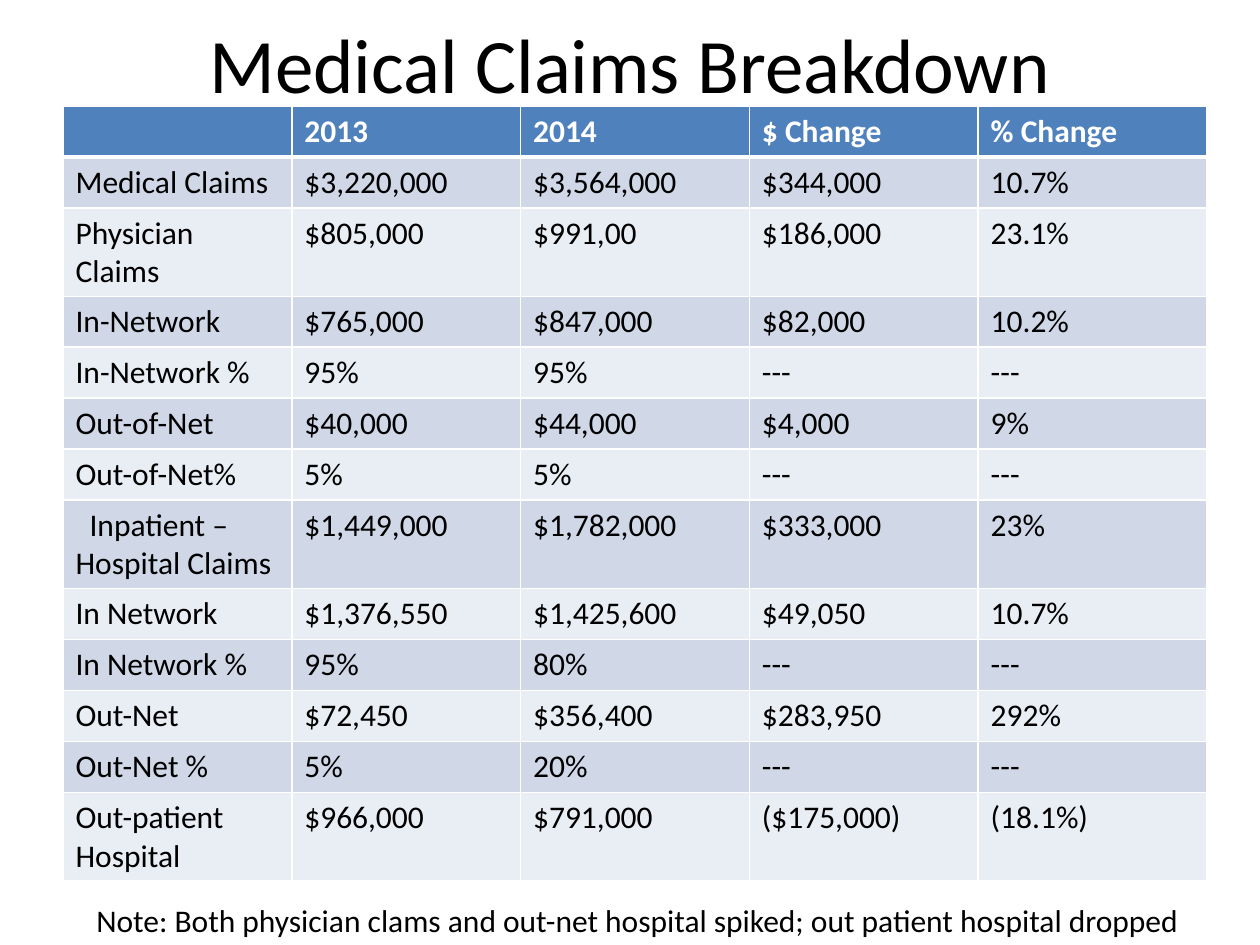
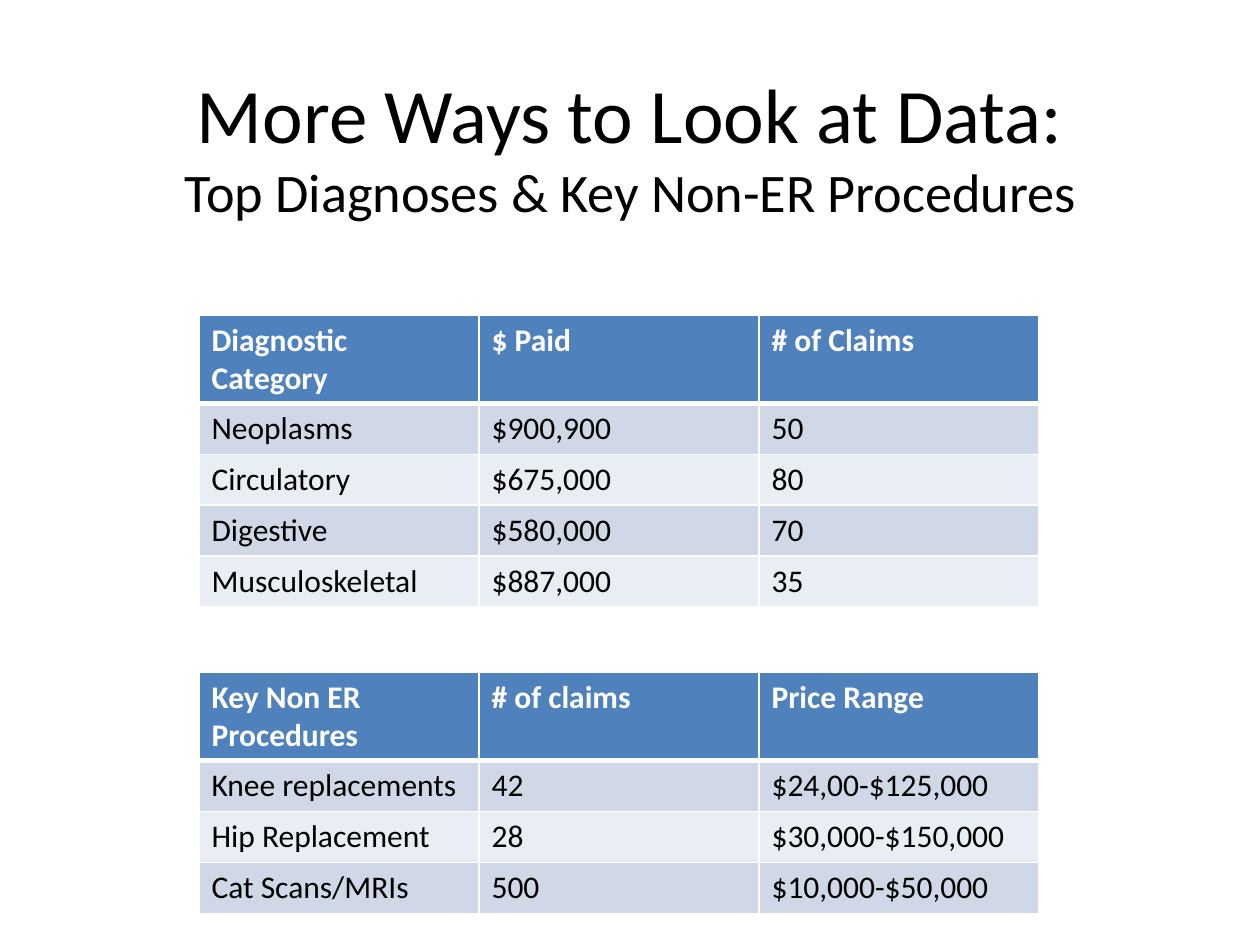
from lxml import etree
from pptx import Presentation
from pptx import util as u
from pptx.dml.color import RGBColor
from pptx.enum import text
from pptx.oxml import ns

PX = u.Inches(1) / 126
FONT = "Calibri"
BLACK = RGBColor(0x00, 0x00, 0x00)
WHITE = RGBColor(0xFF, 0xFF, 0xFF)
HEADER_BLUE = RGBColor(0x4F, 0x81, 0xBD)
BANDS = [RGBColor(0xE9, 0xED, 0xF4), RGBColor(0xD0, 0xD8, 0xE8)]
ROW_HEIGHT = 51

CLAIMS = [
    ["", "2013", "2014", "$ Change", "% Change"],
    ["Medical Claims", "$3,220,000", "$3,564,000", "$344,000", "10.7%"],
    ["Physician Claims", "$805,000", "$991,00", "$186,000", "23.1%"],
    ["In-Network", "$765,000", "$847,000", "$82,000", "10.2%"],
    ["In-Network %", "95%", "95%", "---", "---"],
    ["Out-of-Net", "$40,000", "$44,000", "$4,000", "9%"],
    ["Out-of-Net%", "5%", "5%", "---", "---"],
    ["Inpatient –Hospital Claims", "$1,449,000", "$1,782,000", "$333,000", "23%"],
    ["In Network", "$1,376,550", "$1,425,600", "$49,050", "10.7%"],
    ["In Network %", "95%", "80%", "---", "---"],
    ["Out-Net", "$72,450", "$356,400", "$283,950", "292%"],
    ["Out-Net %", "5%", "20%", "---", "---"],
    ["Out-patient Hospital", "$966,000", "$791,000", "($175,000)", "(18.1%)"],
]
DIAGNOSES = [
    ["Diagnostic Category", "$ Paid", "# of Claims"],
    ["Neoplasms", "$900,900", "50"],
    ["Circulatory", "$675,000", "80"],
    ["Digestive", "$580,000", "70"],
    ["Musculoskeletal", "$887,000", "35"],
]
PROCEDURES = [
    ["Key Non ER Procedures", "# of claims", "Price Range"],
    ["Knee replacements", "42", "$24,00-$125,000"],
    ["Hip Replacement", "28", "$30,000-$150,000"],
    ["Cat Scans/MRIs", "500", "$10,000-$50,000"],
]


def add_text(page, place, words, sizes, align=text.PP_ALIGN.LEFT,
             anchor=text.MSO_ANCHOR.TOP):
    """Add a one-paragraph text box; each line takes its own size in points."""
    box = page.shapes.add_textbox(*[round(n * PX) for n in place])
    frame = box.text_frame
    frame.word_wrap = True
    frame.vertical_anchor = anchor
    para = frame.paragraphs[0]
    para.text = words
    para.alignment = align
    for span, size in zip(para.runs, sizes):
        span.font.name = FONT
        span.font.size = u.Pt(size)
        span.font.color.rgb = BLACK
    return box


def add_banded_table(page, left, top, width, rows):
    """Add a table with a blue header, banded rows and white cell borders."""
    table = page.shapes.add_table(
        len(rows), len(rows[0]), round(left * PX), round(top * PX),
        round(width * PX), round(ROW_HEIGHT * len(rows) * PX)).table
    for r, values in enumerate(rows):
        for c, value in enumerate(values):
            cell = table.cell(r, c)
            cell.text = value
            properties = cell._tc.get_or_add_tcPr()
            for side in "LRTB":
                under_header = (r, side) in [(0, "B"), (1, "T")]
                line = etree.SubElement(properties, ns.qn(f"a:ln{side}"),
                                        w=str(u.Pt(3 if under_header else 1)))
                fill = etree.SubElement(line, ns.qn("a:solidFill"))
                etree.SubElement(fill, ns.qn("a:srgbClr"), val=str(WHITE))
            cell.fill.solid()
            cell.fill.fore_color.rgb = BANDS[r % 2] if r else HEADER_BLUE
            font = cell.text_frame.paragraphs[0].font
            font.name = FONT
            font.size = u.Pt(18)
            font.bold = r == 0
            font.color.rgb = BLACK if r else WHITE
    return table


deck = Presentation()
deck.slide_width, deck.slide_height = u.Inches(10), u.Inches(7.5)
blank = deck.slide_layouts[6]
title_style = dict(align=text.PP_ALIGN.CENTER, anchor=text.MSO_ANCHOR.MIDDLE)

# Medical claims
page = deck.slides.add_slide(blank)
add_text(page, (63, 0, 1134, 126), "Medical Claims Breakdown", [44], **title_style)
claims = add_banded_table(page, 63, 106, 1144, CLAIMS)
claims.rows[2].height = round(83 * PX)
inpatient = claims.cell(7, 0).text_frame.paragraphs[0]
inpatient._p.get_or_add_pPr().set("indent", str(round(14 * PX)))
note = add_text(
    page, (84, 895, 1144, 50),
    "Note: Both physician clams and out-net hospital spiked; out patient hospital dropped",
    [18])
note.text_frame.auto_size = text.MSO_AUTO_SIZE.SHAPE_TO_FIT_TEXT

# Diagnoses and procedures
page = deck.slides.add_slide(blank)
add_text(page, (63, 38, 1134, 214),
         "More Ways to Look at Data:\vTop Diagnoses & Key Non-ER Procedures",
         [44, 31], **title_style)
for top, rows in [(315, DIAGNOSES), (672, PROCEDURES)]:
    add_banded_table(page, 199, top, 840, rows)

deck.save("out.pptx")
